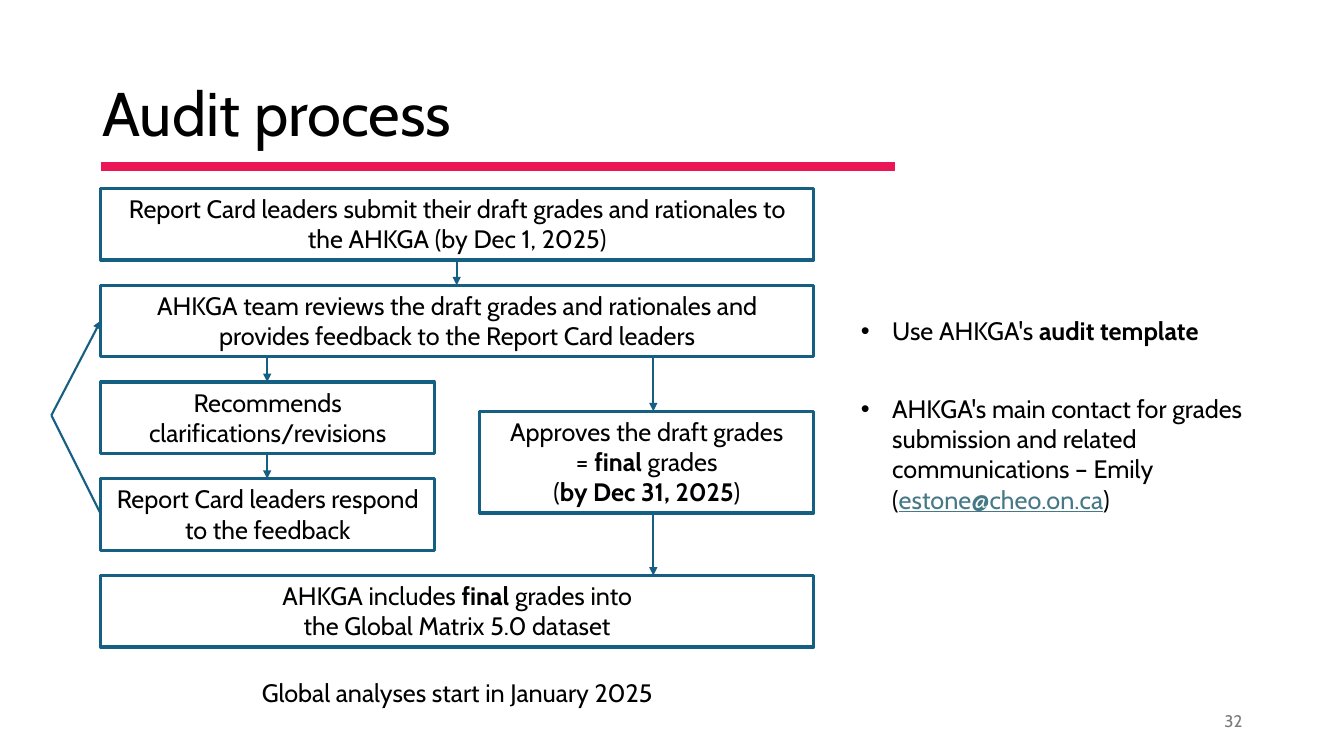
from lxml.etree import SubElement
from pptx import Presentation
from pptx.dml.color import RGBColor
from pptx.enum.shapes import MSO_CONNECTOR as Connector, MSO_SHAPE as Shape
from pptx.enum.text import MSO_ANCHOR as Anchor, PP_ALIGN as Align
from pptx.oxml.ns import qn
from pptx.util import Emu, Pt

SCALE = 9144  # EMU per px, at 100 px to the inch
FONT = "Cabin"
BLACK = RGBColor(0x00, 0x00, 0x00)
GREY = RGBColor(0x79, 0x79, 0x79)
PINK = RGBColor(0xEA, 0x16, 0x56)
BLUE = RGBColor(0x15, 0x60, 0x82)
LINK = RGBColor(0x46, 0x78, 0x86)


def px(value):
    return Emu(value * SCALE)


def bold(text):
    return text, {"bold": True}


def write(frame, paragraphs, size=18, color=BLACK, align=Align.CENTER,
          anchor=Anchor.TOP, spacing=None, gap=0, bullet=False):
    """Each paragraph is a list of runs: a string, or a (string, format) pair."""
    frame.word_wrap = True
    frame.vertical_anchor = anchor
    for index, runs in enumerate(paragraphs):
        para = frame.add_paragraph() if index else frame.paragraphs[0]
        para.alignment = align
        if spacing:
            para.line_spacing = spacing
        if index and gap:
            para.space_before = Pt(gap)
        if bullet:
            properties = para._p.get_or_add_pPr()
            properties.set("marL", str(px(31)))
            properties.set("indent", str(px(-31)))
            SubElement(properties, qn("a:buFont")).set("typeface", "Arial")
            SubElement(properties, qn("a:buChar")).set("char", "•")
        for item in runs:
            text, style = (item, {}) if isinstance(item, str) else item
            span = para.add_run()
            span.text = text
            span.font.name = FONT
            span.font.size = Pt(size)
            span.font.bold = style.get("bold", False)
            span.font.underline = style.get("underline", False)
            span.font.color.rgb = style.get("color", color)


class Page:
    def __init__(self, deck):
        self.shapes = deck.slides.add_slide(deck.slide_layouts[6]).shapes

    def text(self, left, top, width, height, paragraphs, **style):
        box = self.shapes.add_textbox(px(left), px(top), px(width), px(height))
        write(box.text_frame, paragraphs, **style)

    def step(self, left, top, width, height, paragraphs):
        box = self.shapes.add_shape(Shape.RECTANGLE, px(left), px(top), px(width), px(height))
        box.shadow.inherit = False
        box.fill.background()
        box.line.color.rgb = BLUE
        box.line.width = Pt(2.25)
        write(box.text_frame, paragraphs)

    def line(self, x1, y1, x2, y2, color=BLUE, width=1.5, arrow=True):
        line = self.shapes.add_connector(Connector.STRAIGHT, px(x1), px(y1), px(x2), px(y2))
        line.line.color.rgb = color
        line.line.width = Pt(width)
        if arrow:
            SubElement(line.line._get_or_add_ln(), qn("a:tailEnd")).set("type", "triangle")
        SubElement(line._element.spPr, qn("a:effectLst"))


def main():
    deck = Presentation()
    deck.slide_width, deck.slide_height = px(1333), px(750)
    page = Page(deck)

    # Title, rule and page number
    page.text(92, 43, 1150, 145, [["Audit process"]], size=44, align=Align.LEFT,
              anchor=Anchor.MIDDLE, spacing=0.9)
    page.text(942, 695, 300, 40, [["32"]], size=12, color=GREY, align=Align.RIGHT,
              anchor=Anchor.MIDDLE)
    page.line(100, 165, 888, 165, color=PINK, width=6, arrow=False)

    # Steps: evenly spaced rows, with the approval box to the right
    left, first_top, pitch, height = 100, 187, 96, 71
    wide, narrow = 707, 331
    rows = [
        (wide, [["Report Card leaders submit their draft grades and rationales to "
                 "the AHKGA (by Dec 1, 2025)"]]),
        (wide, [["AHKGA team reviews the draft grades and rationales and "
                 "provides feedback to the Report Card leaders"]]),
        (narrow, [["Recommends"], ["clarifications/revisions"]]),
        (narrow, [["Report Card leaders respond to the feedback"]]),
        (wide, [["AHKGA includes ", bold("final "), "grades into"],
                ["the Global Matrix 5.0 dataset"]]),
    ]
    tops = [first_top + row * pitch for row in range(len(rows))]
    bottoms = [top + height for top in tops]
    for top, (width, paragraphs) in zip(tops, rows):
        page.step(left, top, width, height, paragraphs)

    approval_left, approval_top, approval_height = left + wide - narrow, 408, 101
    page.step(approval_left, approval_top, narrow, approval_height, [
        ["Approves the draft grades"],
        ["= ", bold("final "), "grades"],
        ["(", bold("by Dec 31, 2025"), ")"],
    ])

    # Arrows down between steps
    center, left_x, right_x = 453, 265, 648
    for x, start, end in [
        (center, bottoms[0], tops[1]),
        (left_x, bottoms[1], tops[2]),
        (left_x, bottoms[2], tops[3]),
        (right_x, bottoms[1], approval_top),
        (right_x, approval_top + approval_height, tops[4]),
    ]:
        page.line(x, start, x, end)

    # Feedback loop back to the review
    loop_x, loop_y = 51, 412
    page.line(loop_x, loop_y, left, tops[1] + height // 2)
    page.line(loop_x, loop_y, left, tops[3] + height // 2, arrow=False)

    # Closing line and side notes
    page.text(120, 667, 667, 40, [["Global analyses start in January 2025"]])
    page.text(844, 308, 449, 240, [
        ["Use AHKGA's ", bold("audit template")],
        ["AHKGA's main contact for grades submission and related communications – Emily (",
         ("estone@cheo.on.ca", {"color": LINK, "underline": True}), ")"],
    ], align=Align.LEFT, gap=34, bullet=True)

    deck.save("out.pptx")


if __name__ == "__main__":
    main()
